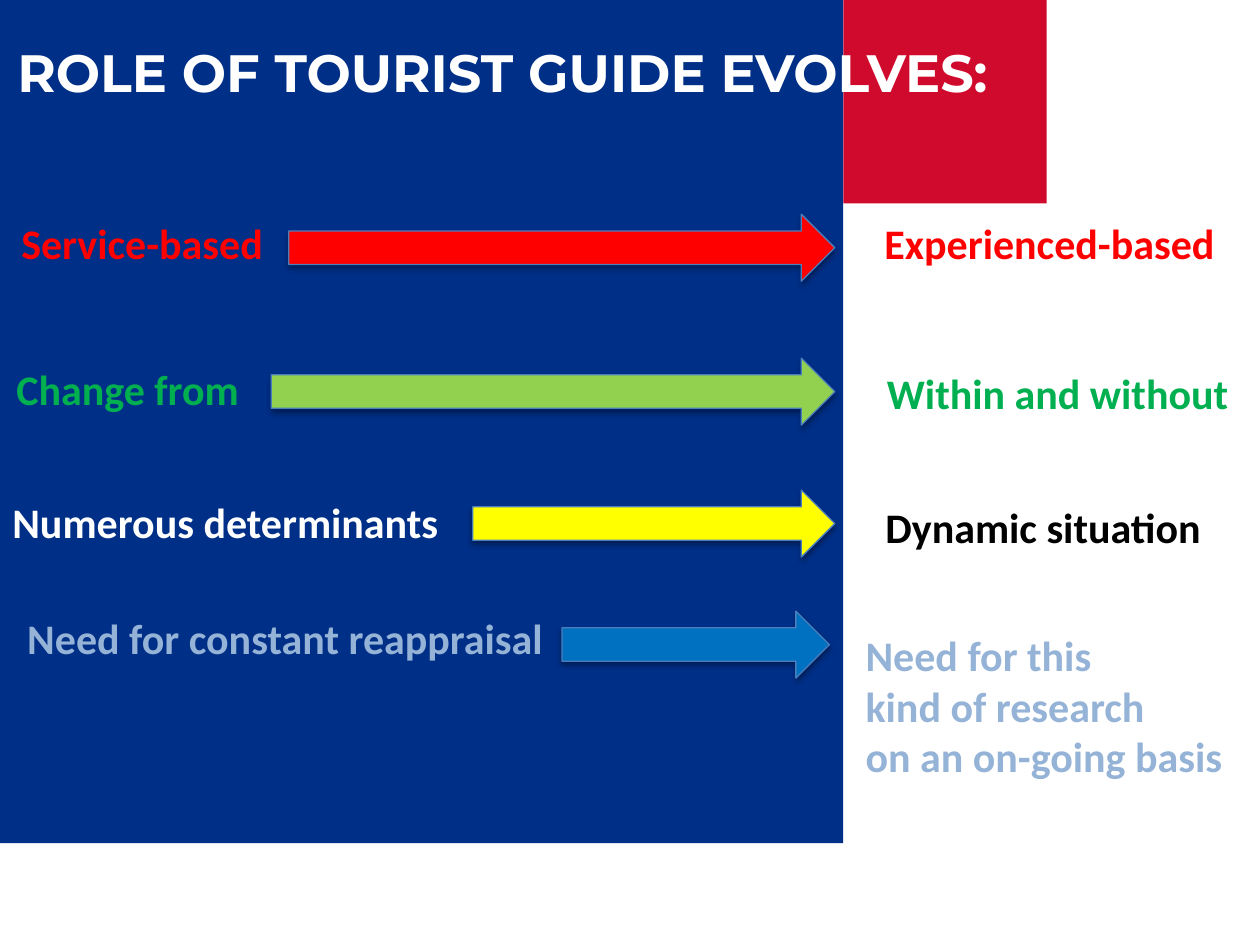
from dataclasses import dataclass

from lxml.etree import SubElement
from pptx import Presentation
from pptx.dml.color import RGBColor
from pptx.enum.shapes import MSO_SHAPE
from pptx.enum.text import MSO_AUTO_SIZE
from pptx.oxml.ns import qn
from pptx.shapes.autoshape import Shape
from pptx.slide import Slide
from pptx.util import Cm, Pt


@dataclass(frozen=True)
class Theme:
    navy: str = "002F87"
    crimson: str = "CF0A2C"
    white: str = "FFFFFF"
    black: str = "000000"
    red: str = "FF0000"
    green: str = "00B050"
    lime: str = "92D050"
    yellow: str = "FFFF00"
    blue: str = "0070C0"
    pale_blue: str = "95B3D7"
    outline: str = "4B7EBC"
    heading_font: str = "Montserrat"
    body_font: str = "Calibri"
    heading_size: int = 30
    body_size: int = 24


THEME = Theme()
ARROW_HEIGHT = 1.35
LINE_HEIGHT = 1.02
LABEL_PADDING = 0.25


@dataclass(frozen=True)
class Label:
    lines: tuple[str, ...]
    left: float
    top: float
    width: float
    color: str
    font: str = THEME.body_font
    size: int = THEME.body_size


@dataclass(frozen=True)
class Arrow:
    left: float
    top: float
    tip: float
    color: str


@dataclass(frozen=True)
class Shift:
    before: Label
    after: Label
    arrow: Arrow


HEADING = Label(("ROLE OF TOURIST GUIDE EVOLVES:",), 0.1, 0.69, 21.67,
                THEME.white, THEME.heading_font, THEME.heading_size)

SHIFTS = (
    Shift(Label(("Service-based",), 0.18, 4.27, 5.64, THEME.red),
          Label(("Experienced-based",), 17.58, 4.27, 7.44, THEME.red),
          Arrow(5.82, 4.32, 16.83, THEME.red)),
    Shift(Label(("Change from",), 0.08, 7.21, 5.05, THEME.green),
          Label(("Within and without",), 17.63, 7.29, 7.47, THEME.green),
          Arrow(5.47, 7.22, 16.83, THEME.lime)),
    Shift(Label(("Numerous determinants",), 0, 9.88, 9.58, THEME.white),
          Label(("Dynamic situation",), 17.6, 9.98, 6.93, THEME.black),
          Arrow(9.53, 9.88, 16.83, THEME.yellow)),
    Shift(Label(("Need for constant reappraisal",), 0.3, 12.22, 11.02, THEME.pale_blue),
          Label(("Need for this", "kind of research", "on an on-going basis"),
                17.2, 12.57, 7.77, THEME.pale_blue),
          Arrow(11.33, 12.32, 16.72, THEME.blue)),
)


def draw_square(slide: Slide, left: float, side: float, color: str) -> None:
    square = slide.shapes.add_shape(MSO_SHAPE.RECTANGLE, Cm(left), 0, Cm(side), Cm(side))
    square.shadow.inherit = False
    square.fill.solid()
    square.fill.fore_color.rgb = RGBColor.from_string(color)
    square.line.fill.background()


def draw_label(slide: Slide, label: Label) -> None:
    line_height = LINE_HEIGHT * label.size / THEME.body_size
    height = len(label.lines) * line_height + LABEL_PADDING
    box = slide.shapes.add_textbox(Cm(label.left), Cm(label.top), Cm(label.width), Cm(height))
    frame = box.text_frame
    frame.word_wrap = False
    frame.auto_size = MSO_AUTO_SIZE.SHAPE_TO_FIT_TEXT
    for index, line in enumerate(label.lines):
        paragraph = frame.add_paragraph() if index else frame.paragraphs[0]
        run = paragraph.add_run()
        run.text = line
        run.font.name = label.font
        run.font.size = Pt(label.size)
        run.font.bold = True
        run.font.color.rgb = RGBColor.from_string(label.color)


def cast_shadow(shape: Shape) -> None:
    shape.shadow.inherit = False
    effects = shape.element.spPr.find(qn("a:effectLst"))
    shadow = SubElement(effects, qn("a:outerShdw"), blurRad=str(Pt(3.1)),
                        dist=str(Pt(1.8)), dir="5400000", rotWithShape="0")
    tint = SubElement(shadow, qn("a:srgbClr"), val=THEME.black)
    SubElement(tint, qn("a:alpha"), val="35000")


def draw_arrow(slide: Slide, arrow: Arrow) -> None:
    shape = slide.shapes.add_shape(MSO_SHAPE.RIGHT_ARROW, Cm(arrow.left), Cm(arrow.top),
                                   Cm(arrow.tip - arrow.left), Cm(ARROW_HEIGHT))
    shape.fill.solid()
    shape.fill.fore_color.rgb = RGBColor.from_string(arrow.color)
    shape.line.color.rgb = RGBColor.from_string(THEME.outline)
    shape.line.width = Pt(0.75)
    cast_shadow(shape)


def main() -> None:
    deck = Presentation()
    deck.slide_width, deck.slide_height = Cm(25.4), Cm(19.05)
    slide = deck.slides.add_slide(deck.slide_layouts[6])
    draw_square(slide, 17, 4.1, THEME.crimson)
    draw_square(slide, 0, 17, THEME.navy)
    draw_label(slide, HEADING)
    for shift in SHIFTS:
        draw_label(slide, shift.before)
        draw_label(slide, shift.after)
        draw_arrow(slide, shift.arrow)
    deck.save("out.pptx")


if __name__ == "__main__":
    main()
